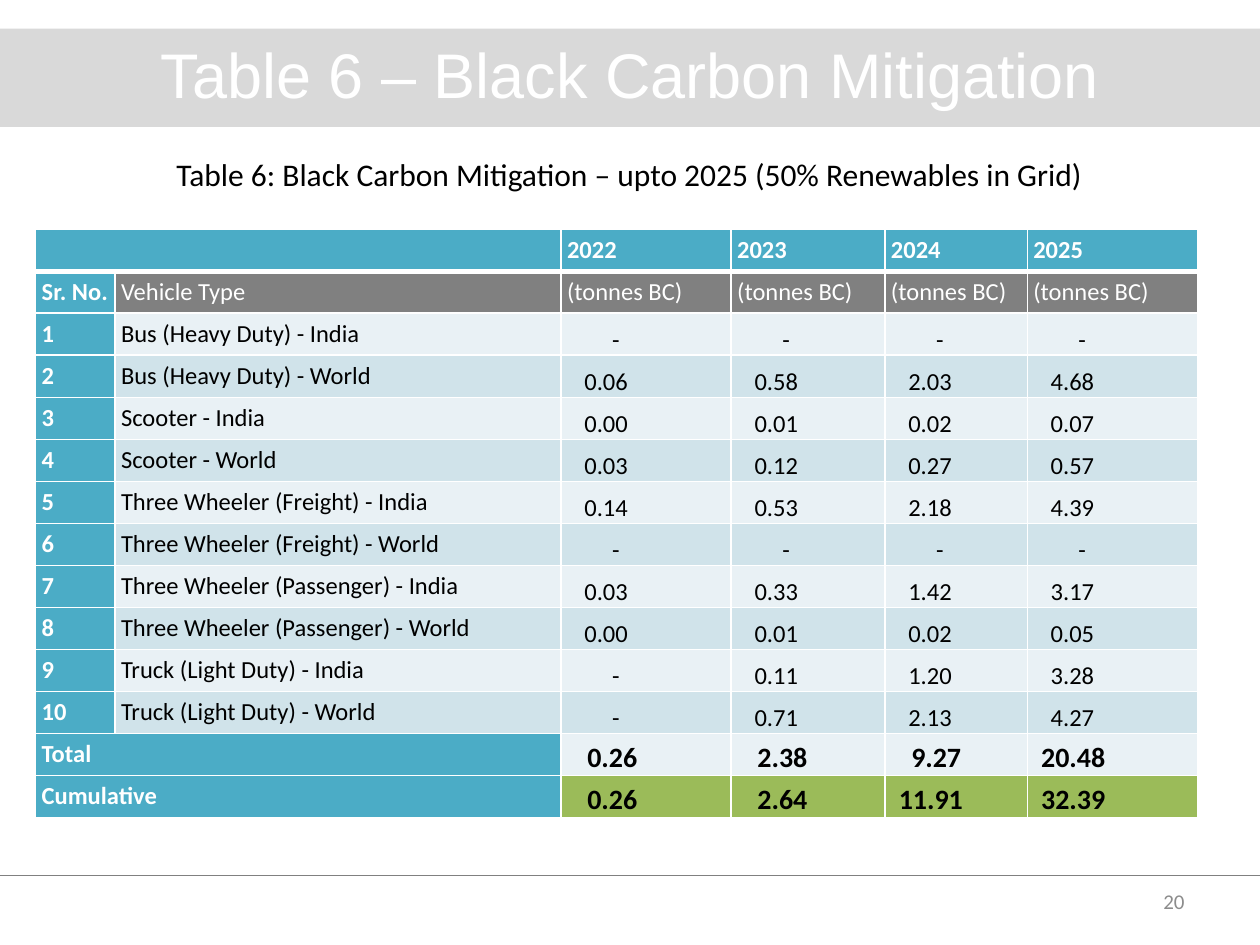
from lxml.etree import SubElement
from pptx import Presentation
from pptx.dml.color import RGBColor
from pptx.enum.dml import MSO_LINE
from pptx.enum.shapes import MSO_CONNECTOR, MSO_SHAPE
from pptx.enum.text import MSO_ANCHOR as Anchor, PP_ALIGN as Align
from pptx.oxml.ns import qn
from pptx.util import Cm, Pt

WHITE = RGBColor(0xFF, 0xFF, 0xFF)
BLACK = RGBColor(0x00, 0x00, 0x00)
BAND = RGBColor(0xD9, 0xD9, 0xD9)
GRAY = RGBColor(0x80, 0x80, 0x80)
PAGE_GRAY = RGBColor(0x8C, 0x8C, 0x8C)
TEAL = RGBColor(0x4B, 0xAC, 0xC6)
PALE = RGBColor(0xE9, 0xF1, 0xF5)
SOFT = RGBColor(0xD0, 0xE3, 0xEA)
GREEN = RGBColor(0x9B, 0xBB, 0x59)

YEARS = ["2022", "2023", "2024", "2025"]
COLUMN_WIDTHS = [1.6, 8.99, 3.43, 3.1, 2.87, 3.43]
VEHICLES = [
    ("Bus (Heavy Duty) - India", "-", "-", "-", "-"),
    ("Bus (Heavy Duty) - World", "0.06", "0.58", "2.03", "4.68"),
    ("Scooter - India", "0.00", "0.01", "0.02", "0.07"),
    ("Scooter - World", "0.03", "0.12", "0.27", "0.57"),
    ("Three Wheeler (Freight) - India", "0.14", "0.53", "2.18", "4.39"),
    ("Three Wheeler (Freight) - World", "-", "-", "-", "-"),
    ("Three Wheeler (Passenger) - India", "0.03", "0.33", "1.42", "3.17"),
    ("Three Wheeler (Passenger) - World", "0.00", "0.01", "0.02", "0.05"),
    ("Truck (Light Duty) - India", "-", "0.11", "1.20", "3.28"),
    ("Truck (Light Duty) - World", "-", "0.71", "2.13", "4.27"),
]
TOTAL = ["0.26", "2.38", "9.27", "20.48"]
CUMULATIVE = ["0.26", "2.64", "11.91", "32.39"]


def write(frame, text, size=14, color=BLACK, bold=False, font="Calibri",
          align=Align.LEFT, indent=0):
    paragraph = frame.paragraphs[0]
    paragraph.alignment = align
    if indent:
        paragraph._p.get_or_add_pPr().set("marL", str(Cm(indent)))
    if not text:
        SubElement(paragraph._p, qn("a:endParaRPr"), sz=str(size * 100))
        return
    run = paragraph.add_run()
    run.text = text
    run.font.size, run.font.name, run.font.bold = Pt(size), font, bold
    run.font.color.rgb = color


class MitigationSlide:
    """Holds the table style and the slide being built."""

    border, border_width, heading_width = "FFFFFF", 1, 3

    def __init__(self, deck):
        self.slide = deck.slides.add_slide(deck.slide_layouts[6])
        self.shapes = self.slide.shapes

    def band(self, left, top, width, height, color):
        band = self.shapes.add_shape(MSO_SHAPE.RECTANGLE, Cm(left), Cm(top), Cm(width), Cm(height))
        band.shadow.inherit = False
        band.fill.solid()
        band.fill.fore_color.rgb = color
        band.line.fill.background()

    def rule(self, left, right, y):
        rule = self.shapes.add_connector(MSO_CONNECTOR.STRAIGHT, Cm(left), Cm(y), Cm(right), Cm(y))
        rule.line.color.rgb = GRAY
        rule.line.width = Pt(0.25)
        rule.line.dash_style = MSO_LINE.ROUND_DOT
        SubElement(rule._element.spPr, qn("a:effectLst"))

    def text(self, left, top, width, height, text, anchor=Anchor.MIDDLE, **style):
        frame = self.shapes.add_textbox(Cm(left), Cm(top), Cm(width), Cm(height)).text_frame
        frame.word_wrap = True
        frame.vertical_anchor = anchor
        write(frame, text, **style)

    def table(self, left, top, height, row_count, widths):
        table = self.shapes.add_table(row_count, len(widths), Cm(left), Cm(top),
                                      Cm(sum(widths)), Cm(height)).table
        table.first_row = table.horz_banding = False
        for column, width in zip(table.columns, widths):
            column.width = Cm(width)
        return table

    def cell(self, cell, text, fill, top=1, bottom=1, **style):
        properties = cell._tc.get_or_add_tcPr()
        widths = {"L": self.border_width, "R": self.border_width, "T": top, "B": bottom}
        for side, width in widths.items():
            line = SubElement(properties, qn(f"a:ln{side}"), w=str(Pt(width)))
            SubElement(SubElement(line, qn("a:solidFill")), qn("a:srgbClr"), val=self.border)
        cell.fill.solid()
        cell.fill.fore_color.rgb = fill
        cell.vertical_anchor = Anchor.MIDDLE
        cell.margin_left = cell.margin_right = cell.margin_top = cell.margin_bottom = Cm(0.12)
        write(cell.text_frame, text, **style)

    def value(self, cell, text, fill, **style):
        indent = 1.01 if text == "-" else 0.45
        if style.get("bold"):
            indent = 0.51 if len(text) == 4 else 0.26
        self.cell(cell, text, fill, indent=indent, **style)
        cell.vertical_anchor = Anchor.BOTTOM
        cell.margin_left = cell.margin_right = cell.margin_top = Cm(0.02)
        cell.margin_bottom = 0

    def mitigation_table(self):
        table = self.table(0.72, 4.62, 11.86, len(VEHICLES) + 4, COLUMN_WIDTHS)
        label = {"color": WHITE, "bold": True}
        for column, text in enumerate(["", ""] + YEARS):
            self.cell(table.cell(0, column), text, TEAL, bottom=self.heading_width, **label)
        units = ["(tonnes BC)"] * len(YEARS)
        for column, text in enumerate(["Sr. No.", "Vehicle Type"] + units):
            self.cell(table.cell(1, column), text, GRAY if column else TEAL,
                      top=self.heading_width, color=WHITE, bold=column == 0)
        for number, (vehicle, *values) in enumerate(VEHICLES, 1):
            row, fill = number + 1, PALE if number % 2 else SOFT
            self.cell(table.cell(row, 0), str(number), TEAL, **label)
            self.cell(table.cell(row, 1), vehicle, fill)
            for column, value in enumerate(values, 2):
                self.value(table.cell(row, column), value, fill)
        sums = [("Total", TOTAL, PALE), ("Cumulative", CUMULATIVE, GREEN)]
        for row, (name, values, fill) in enumerate(sums, len(VEHICLES) + 2):
            self.cell(table.cell(row, 0), name, TEAL, **label)
            self.cell(table.cell(row, 1), "", TEAL)
            for column, value in enumerate(values, 2):
                self.value(table.cell(row, column), value, fill, size=16, bold=True)
        for row in (0, len(VEHICLES) + 2, len(VEHICLES) + 3):
            table.cell(row, 0).merge(table.cell(row, 1))


def main():
    deck = Presentation()
    deck.slide_width, deck.slide_height = Cm(25.4), Cm(19.05)
    page = MitigationSlide(deck)
    page.band(0, 0.58, 25.4, 1.98, BAND)
    page.rule(0, 25.4, 17.65)
    page.text(18.21, 17.65, 5.92, 1.02, "20", size=12, color=PAGE_GRAY, align=Align.RIGHT)
    page.text(0, 0.58, 25.4, 1.78, "Table 6 – Black Carbon Mitigation",
              size=36, color=WHITE, font="Arial", align=Align.CENTER)
    page.text(0.08, 3, 25.22, 1.02,
              "Table 6: Black Carbon Mitigation – upto 2025 (50% Renewables in Grid)",
              anchor=Anchor.TOP, size=18, align=Align.CENTER)
    page.mitigation_table()
    deck.save("out.pptx")


if __name__ == "__main__":
    main()
